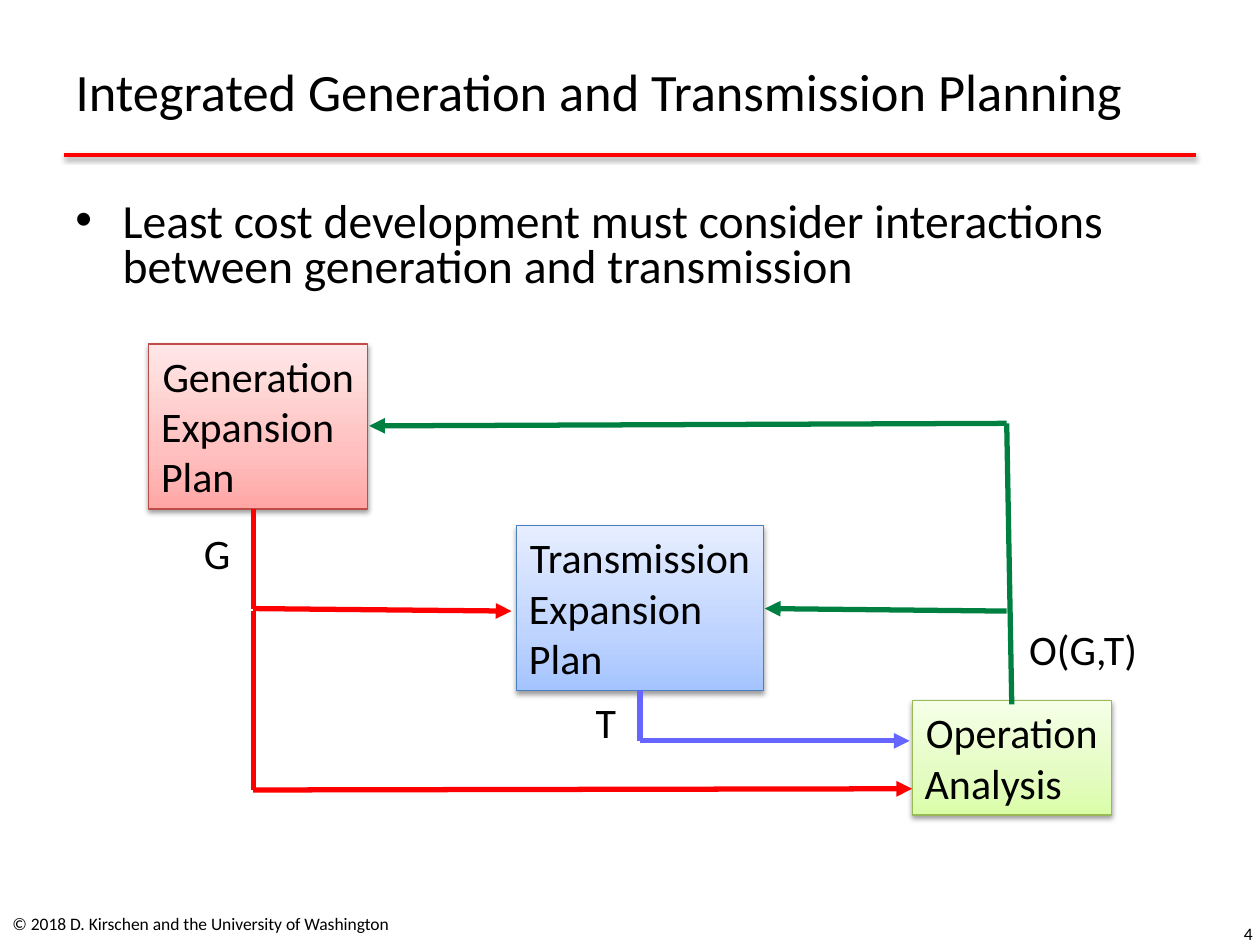
import pptx
import pptx.util
import pptx.dml.color
import pptx.enum.shapes
import pptx.enum.text
import pptx.oxml
import pptx.oxml.ns

COLORS = {
    "text": "000000", "red": "FF0000", "green": "008040", "violet": "6666FF",
    "generation": ("FFA6A5", "FFC0BF", "FFE7E7", "BF4C48"),
    "transmission": ("A4C4FF", "BFD4FF", "E6EEFF", "4B7EBC"),
    "operation": ("DAFDA7", "E4FCC2", "F5FFE7", "98B955"),
}
NAMESPACE = pptx.oxml.ns.nsdecls("a")
SHADOW = (f'<a:effectLst {NAMESPACE}><a:outerShdw blurRad="39370" dist="20320" dir="5400000" '
          'rotWithShape="0"><a:srgbClr val="000000"><a:alpha val="38000"/></a:srgbClr>'
          '</a:outerShdw></a:effectLst>')
ALIGN = pptx.enum.text.PP_ALIGN
ANCHOR = pptx.enum.text.MSO_ANCHOR
FIT = pptx.enum.text.MSO_AUTO_SIZE

deck = pptx.Presentation()
deck.slide_width = pptx.util.Inches(10)
deck.slide_height = pptx.util.Inches(7.5)
page = deck.slides.add_slide(deck.slide_layouts[5])

# Grid of 100 columns by 75 rows
COL = deck.slide_width / 100
ROW = deck.slide_height / 75


def write(shape, lines, size, align=ALIGN.LEFT, **frame_format):
    """Fill a shape with one paragraph per line; align applies to the first."""
    frame = shape.text_frame
    frame.text = "\n".join(lines)
    for name, value in frame_format.items():
        setattr(frame, name, value)
    for number, para in enumerate(frame.paragraphs):
        para.alignment = ALIGN.LEFT if number else align
        font = para.runs[0].font
        for name, value in {"name": "Calibri", "size": pptx.util.Pt(size)}.items():
            setattr(font, name, value)
        font.color.rgb = pptx.dml.color.RGBColor.from_string(COLORS["text"])
    return frame


def draw_line(start, end, color, width=3, arrow=False, effects=f"<a:effectLst {NAMESPACE}/>"):
    line = page.shapes.add_connector(
        pptx.enum.shapes.MSO_CONNECTOR.STRAIGHT,
        int(start[0] * COL), int(start[1] * ROW), int(end[0] * COL), int(end[1] * ROW))
    line.line.color.rgb = pptx.dml.color.RGBColor.from_string(COLORS[color])
    line.line.width = pptx.util.Pt(width)
    if arrow:
        line.line._get_or_add_ln().append(
            pptx.oxml.parse_xml(f'<a:tailEnd {NAMESPACE} type="triangle"/>'))
    line._element.spPr.append(pptx.oxml.parse_xml(effects))


# Title and the rule under it
draw_line((5.1, 12.3), (94.9, 12.3), "red", width=2, effects=SHADOW)
title = page.shapes.title
for name, value in {"left": 5 * COL, "top": 1.3 * ROW,
                    "width": 90 * COL, "height": 11.7 * ROW}.items():
    setattr(title, name, int(value))
write(title, ["Integrated Generation and Transmission Planning"], 30,
      vertical_anchor=ANCHOR.MIDDLE, auto_size=FIT.NONE)

# Bullet, footer, page number and flow labels
texts = [
    ("Least cost development must consider interactions between generation and transmission",
     (5, 15.5, 90, 11), 27.2, ALIGN.LEFT, {"word_wrap": True}),
    ("© 2018 D. Kirschen and the University of Washington",
     (0, 71.3, 32.7, 4), 10, ALIGN.LEFT, {"word_wrap": True, "vertical_anchor": ANCHOR.MIDDLE}),
    ("4", (77.1, 72.1, 23.3, 4), 10, ALIGN.RIGHT,
     {"word_wrap": True, "vertical_anchor": ANCHOR.MIDDLE}),
]
labels = [("G", 15.2, 41.4, 4.1), ("T", 46.3, 54.8, 3.7), ("O(G,T)", 80.7, 49, 10.7)]
for label, left, top, width in labels:
    texts.append((label, (left, top, width, 5), 24, ALIGN.LEFT,
                  {"word_wrap": False, "auto_size": FIT.SHAPE_TO_FIT_TEXT}))
for text, (left, top, width, height), size, align, frame_format in texts:
    box = page.shapes.add_textbox(int(left * COL), int(top * ROW),
                                  int(width * COL), int(height * ROW))
    frame = write(box, [text], size, align, **frame_format)
    if size == 27.2:
        para = frame.paragraphs[0]
        para.line_spacing = 0.8
        para.space_before = pptx.util.Pt(5.4)
        properties = para._p.get_or_add_pPr()
        properties.set("marL", "342900")
        properties.set("indent", "-342900")
        for bullet in (f'<a:buFont {NAMESPACE} typeface="Arial"/>',
                       f'<a:buChar {NAMESPACE} char="•"/>'):
            properties.append(pptx.oxml.parse_xml(bullet))

# Planning stages
stages = [
    ("generation", ["Generation", "Expansion", "Plan"], (11.8, 27.3, 17.4, 13.1)),
    ("transmission", ["Transmission ", "Expansion", "Plan"], (41, 41.7, 19.6, 13.1)),
    ("operation", ["Operation", "Analysis"], (72.4, 55.6, 15.8, 9.1)),
]
for stage, lines, (left, top, width, height) in stages:
    box = page.shapes.add_shape(pptx.enum.shapes.MSO_SHAPE.RECTANGLE,
                                int(left * COL), int(top * ROW),
                                int(width * COL), int(height * ROW))
    *shades, border = COLORS[stage]
    stops = "".join(f'<a:gs pos="{share * 1000}"><a:srgbClr val="{shade}"/></a:gs>'
                    for share, shade in zip((0, 35, 100), shades))
    box._element.spPr.append(pptx.oxml.parse_xml(
        f'<a:gradFill {NAMESPACE} rotWithShape="1"><a:gsLst>{stops}</a:gsLst>'
        '<a:lin ang="16200000" scaled="0"/></a:gradFill>'))
    box.line.color.rgb = pptx.dml.color.RGBColor.from_string(border)
    box.line.width = pptx.util.Pt(0.75)
    box._element.spPr.append(pptx.oxml.parse_xml(SHADOW))
    write(box, lines, 24, ALIGN.CENTER, word_wrap=False,
          vertical_anchor=ANCHOR.TOP, auto_size=FIT.SHAPE_TO_FIT_TEXT)

# Flows between the stages: start, end, colour, arrowhead
flows = [
    ((80.3, 55.9), (79.9, 33.6), "green", False),
    ((79.9, 33.6), (29.3, 33.8), "green", True),
    ((79.9, 48.5), (60.7, 48.3), "green", True),
    ((20.1, 40.4), (20.1, 48.3), "red", False),
    ((20.1, 48.3), (40.6, 48.5), "red", True),
    ((20.1, 48.5), (20.1, 62.7), "red", False),
    ((20.1, 62.7), (72.4, 62.6), "red", True),
    ((50.8, 54.8), (50.8, 58.8), "violet", False),
    ((50.8, 58.8), (72.2, 58.8), "violet", True),
]
for start, end, color, arrow in flows:
    draw_line(start, end, color, arrow=arrow)

deck.save("out.pptx")
